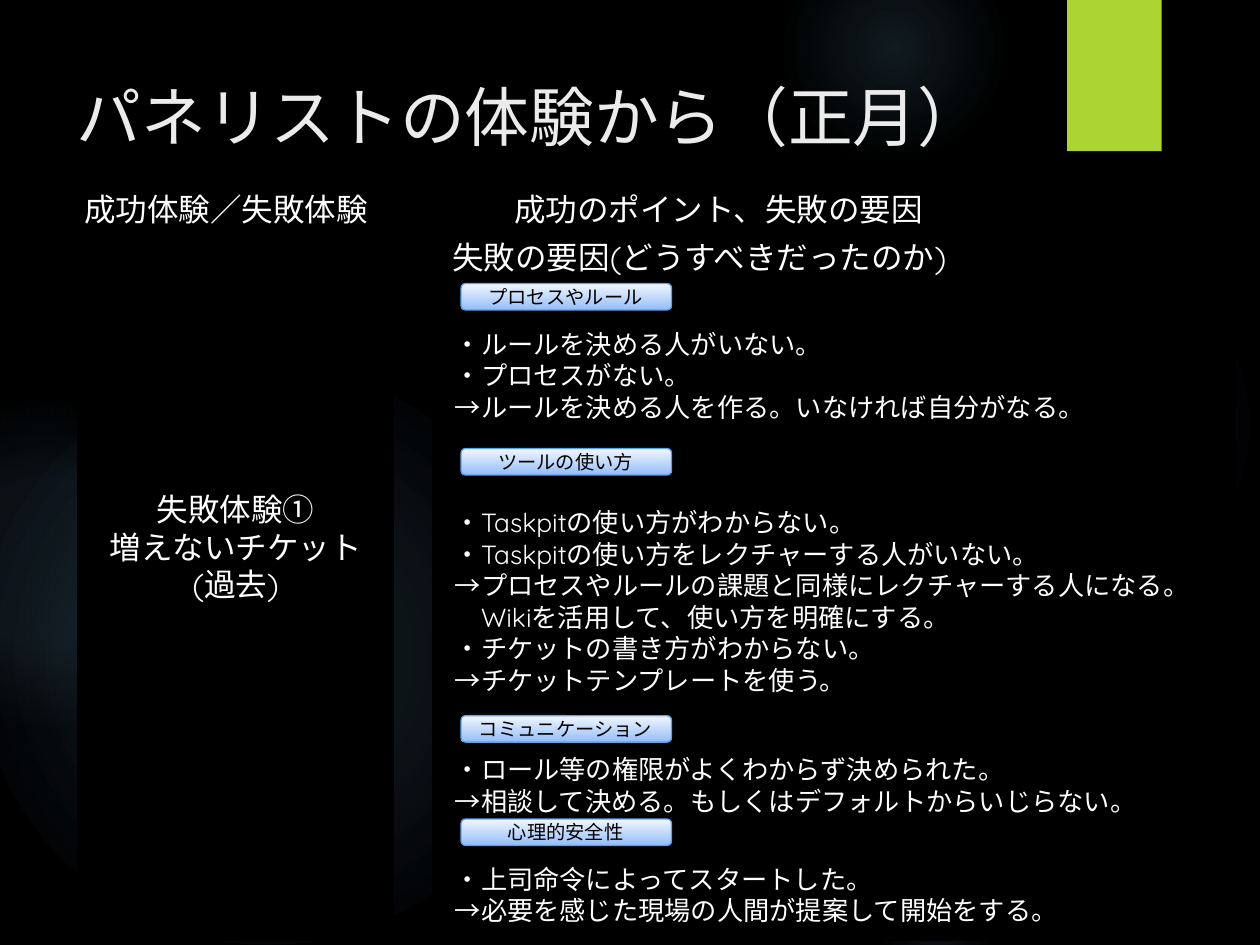
"""Build the panelist experience slide with its causes grouped under four labels."""
from dataclasses import dataclass

from lxml.etree import SubElement
from pptx import Presentation
from pptx.dml.color import RGBColor
from pptx.enum.shapes import MSO_SHAPE
from pptx.enum.text import MSO_ANCHOR, PP_ALIGN
from pptx.oxml.ns import qn
from pptx.util import Pt

EMU_PER_PX = 9144
BODY_FONT = "Quicksand"
LABEL_FONT = "Noto Sans CJK JP"
WHITE, BLACK = "FFFFFF", "000000"


@dataclass(frozen=True)
class Box:
    left: int
    top: int
    width: int
    height: int

    def emu(self) -> tuple:
        return tuple(v * EMU_PER_PX for v in (self.left, self.top, self.width, self.height))


@dataclass(frozen=True)
class Style:
    size: int
    font: str = BODY_FONT
    color: str = WHITE
    align: PP_ALIGN = PP_ALIGN.LEFT
    anchor: MSO_ANCHOR = MSO_ANCHOR.MIDDLE
    spacing: object = None


@dataclass(frozen=True)
class Glow:
    left: int
    top: int
    diameter: int
    inner: int
    middle: int
    middle_at: int
    edge_at: int


@dataclass(frozen=True)
class Passage:
    box: Box
    style: Style
    text: str


@dataclass(frozen=True)
class Label:
    top: int
    text: str


TITLE = Style(37, color="EBEBEB")
HEADING = Style(18, LABEL_FONT, anchor=MSO_ANCHOR.TOP, spacing=1.5)
CASE = Style(18, align=PP_ALIGN.CENTER, spacing=Pt(21.5))
SUBHEADING = Style(18)
CAUSE = Style(15, spacing=Pt(18))
LABEL = Style(11, LABEL_FONT, BLACK, PP_ALIGN.CENTER)

GLOWS = (
    Glow(689, 183, 308, 7, 6, 36, 69),
    Glow(622, -50, 175, 14, 7, 36, 73),
    Glow(689, 667, 108, 14, 7, 36, 66),
    Glow(-17, 292, 458, 11, 10, 36, 75),
    Glow(-92, 317, 258, 8, 8, 36, 72),
)
PANELS = (Box(62, 171, 250, 575), Box(344, 172, 636, 574))
PASSAGES = (
    Passage(Box(68, 299, 238, 270), CASE, "失敗体験①\n増えないチケット\n(過去)"),
    Passage(Box(354, 176, 591, 56), SUBHEADING, "失敗の要因(どうすべきだったのか)"),
    Passage(Box(356, 244, 610, 108), CAUSE,
            "・ルールを決める人がいない。\n・プロセスがない。\n"
            "→ルールを決める人を作る。いなければ自分がなる。"),
    Passage(Box(356, 334, 610, 286), CAUSE,
            "・Taskpitの使い方がわからない。\n"
            "・Taskpitの使い方をレクチャーする人がいない。\n"
            "→プロセスやルールの課題と同様にレクチャーする人になる。\n"
            "　Wikiを活用して、使い方を明確にする。\n"
            "・チケットの書き方がわからない。\n→チケットテンプレートを使う。"),
    Passage(Box(356, 656, 610, 108), CAUSE,
            "・上司命令によってスタートした。\n"
            "→必要を感じた現場の人間が提案して開始をする。"),
    Passage(Box(356, 569, 610, 108), CAUSE,
            "・ロール等の権限がよくわからず決められた。\n"
            "→相談して決める。もしくはデフォルトからいじらない。"),
    Passage(Box(62, 131, 248, 52), HEADING, "成功体験／失敗体験"),
    Passage(Box(403, 131, 423, 32), HEADING, "成功のポイント、失敗の要因"),
)
LABELS = (
    Label(225, "プロセスやルール"),
    Label(568, "コミュニケーション"),
    Label(650, "心理的安全性"),
    Label(356, "ツールの使い方"),
)


def rgb(color: str) -> RGBColor:
    """Turn a hex string into a colour."""
    return RGBColor.from_string(color)


def write(frame, text: str, style: Style) -> None:
    """Fill a text frame and format its paragraphs and runs."""
    frame.text = text
    frame.word_wrap = True
    frame.vertical_anchor = style.anchor
    for paragraph in frame.paragraphs:
        paragraph.alignment = style.align
        if style.spacing:
            paragraph.line_spacing = style.spacing
        for run in paragraph.runs:
            run.font.size = Pt(style.size)
            run.font.name = style.font
            run.font.color.rgb = rgb(style.color)
            east_asian = SubElement(run.font._element, qn("a:ea"))
            east_asian.set("typeface", style.font)


def add_passage(slide, passage: Passage) -> None:
    """Add a text box with narrow insets."""
    frame = slide.shapes.add_textbox(*passage.box.emu()).text_frame
    inset = 5 * EMU_PER_PX
    frame.margin_left = frame.margin_right = inset
    frame.margin_top = frame.margin_bottom = inset
    write(frame, passage.text, passage.style)


def add_block(slide, preset: MSO_SHAPE, box: Box, fill: str):
    """Add a flat preset shape without outline."""
    block = slide.shapes.add_shape(preset, *box.emu())
    block.shadow.inherit = False
    block.fill.solid()
    block.fill.fore_color.rgb = rgb(fill)
    block.line.fill.background()
    return block


def add_glow(slide, glow: Glow) -> None:
    """Add a circle that fades outwards from its centre."""
    box = Box(glow.left, glow.top, glow.diameter, glow.diameter)
    circle = add_block(slide, MSO_SHAPE.OVAL, box, BLACK)
    solid = circle.element.spPr.find(qn("a:solidFill"))
    gradient = solid.makeelement(qn("a:gradFill"), {"rotWithShape": "1"})
    solid.getparent().replace(solid, gradient)
    stops = SubElement(gradient, qn("a:gsLst"))
    for position, alpha in ((0, glow.inner), (glow.middle_at, glow.middle), (glow.edge_at, 0)):
        stop = SubElement(stops, qn("a:gs"), pos=str(position * 1000))
        color = SubElement(stop, qn("a:srgbClr"), val="7AC4F0")
        SubElement(color, qn("a:alpha"), val=str(alpha * 1000))
    radial = SubElement(gradient, qn("a:path"), path="circle")
    SubElement(radial, qn("a:fillToRect"), l="50000", t="50000", r="50000", b="50000")


def add_label(slide, label: Label) -> None:
    """Add a rounded label with a vertical gradient and its caption."""
    pill = add_block(slide, MSO_SHAPE.ROUNDED_RECTANGLE, Box(366, label.top, 167, 21), WHITE)
    pill.fill.gradient()
    pill.fill.gradient_angle = 270
    for stop, position, color in zip(pill.fill.gradient_stops, (0, 1), ("F3F7FE", "94BEF9")):
        stop.position = position
        stop.color.rgb = rgb(color)
    pill.line.color.rgb = rgb("5AA0F5")
    pill.line.width = Pt(0.75)
    add_passage(slide, Passage(Box(372, label.top - 4, 154, 29), LABEL, label.text))


def main() -> None:
    """Assemble and save the slide."""
    deck = Presentation()
    deck.slide_width, deck.slide_height = 1000 * EMU_PER_PX, 750 * EMU_PER_PX
    slide = deck.slides.add_slide(deck.slide_layouts[5])
    slide.background.fill.solid()
    slide.background.fill.fore_color.rgb = rgb(BLACK)
    for glow in GLOWS:
        add_glow(slide, glow)
    add_block(slide, MSO_SHAPE.RECTANGLE, Box(847, 0, 75, 120), "ACD433")
    title = slide.shapes.title
    title.left, title.top, title.width, title.height = Box(51, 52, 797, 79).emu()
    write(title.text_frame, "パネリストの体験から（正月）", TITLE)
    title.element.getparent().append(title.element)
    for panel_box in PANELS:
        panel = add_block(slide, MSO_SHAPE.RECTANGLE, panel_box, BLACK)
        panel.line.color.rgb = rgb(BLACK)
        panel.line.width = Pt(1.5)
    for passage in PASSAGES:
        add_passage(slide, passage)
    for label in LABELS:
        add_label(slide, label)
    deck.save("out.pptx")


if __name__ == "__main__":
    main()
